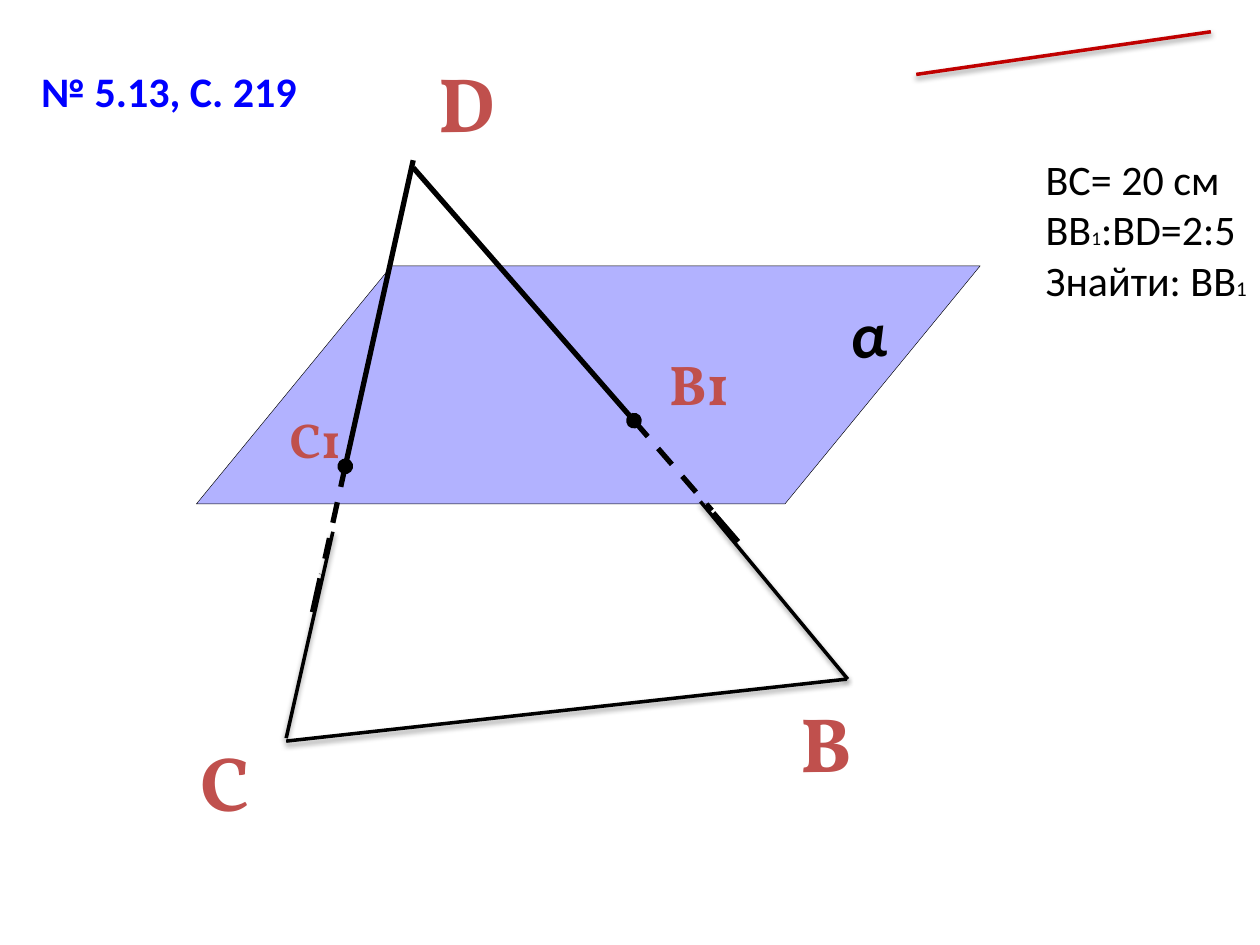
from lxml import etree
from pptx import Presentation
from pptx.dml.color import RGBColor as Rgb
from pptx.enum.dml import MSO_LINE as Dash
from pptx.enum.shapes import MSO_CONNECTOR as Conn, MSO_SHAPE as Shape
from pptx.enum.text import MSO_AUTO_SIZE as Fit, PP_ALIGN as Align
from pptx.oxml.ns import qn
from pptx.util import Cm, Pt

BLACK = Rgb(0, 0, 0)
BLUE = Rgb(0, 0, 255)
RED = Rgb(192, 0, 0)
ROSE = Rgb(192, 80, 77)
SERIF = "Vollkorn"
SANS = "Calibri"


def sub(node, tag, **attrs):
    return etree.SubElement(node, qn(tag), **attrs)


def add_plane(slide):
    plane = slide.shapes.add_shape(
        Shape.PARALLELOGRAM, Cm(3.96), Cm(5.36), Cm(15.8), Cm(4.8))
    plane.shadow.inherit = False
    plane.adjustments[0] = 0.82
    plane.fill.solid()
    plane.fill.fore_color.rgb = BLUE
    tint = plane.fill._xPr.find(qn("a:solidFill"))[0]
    sub(tint, "a:alpha", val="30000")
    plane.line.color.rgb = BLACK
    plane.line.width = Pt(0.25)


def add_line(slide, start, end, width=3, color=BLACK, dash=False,
             dot=False, shade=False):
    line = slide.shapes.add_connector(
        Conn.STRAIGHT, *(Cm(n) for n in start + end))
    line.line.color.rgb = color
    line.line.width = Pt(width)
    if dash:
        line.line.dash_style = Dash.DASH
    props = line._element.spPr
    if dot:
        sub(props.find(qn("a:ln")), "a:tailEnd", type="oval")
    effect = sub(props, "a:effectLst")
    if shade:
        cast = sub(effect, "a:outerShdw", blurRad="40000", dist="20000",
                   dir="5400000", rotWithShape="0")
        tone = sub(cast, "a:srgbClr", val=str(BLACK))
        sub(tone, "a:alpha", val="38000")


def add_side(slide, top, cut, gap, rest, foot):
    add_line(slide, top, cut, dot=True)
    add_line(slide, cut, gap, dash=True)
    add_line(slide, rest, foot)


def add_box(slide, place, wrap=False):
    box = slide.shapes.add_textbox(*(Cm(n) for n in place))
    frame = box.text_frame
    frame.word_wrap = wrap
    frame.auto_size = Fit.SHAPE_TO_FIT_TEXT
    return box


def style(run, size, name, color, bold=True):
    font = run.font
    font.size = Pt(size)
    font.name = name
    font.color.rgb = color
    font.bold = bold


def add_label(slide, text, place, size, name=SERIF, color=ROSE,
              align=Align.CENTER, wrap=False):
    box = add_box(slide, place, wrap)
    box.text_frame.text = text
    para = box.text_frame.paragraphs[0]
    para.alignment = align
    style(para.runs[0], size, name, color)
    return box


def add_given(slide):
    rows = [
        [("BC= 20 см", 24)],
        [("BB", 24), ("1", 11), (":BD=2:5", 24)],
        [("Знайти: ВВ", 24), ("1", 12)],
    ]
    frame = add_box(slide, (20.83, 2.97, 4.6, 3.33), True).text_frame
    for i, row in enumerate(rows):
        para = frame.add_paragraph() if i else frame.paragraphs[0]
        for text, size in row:
            run = para.add_run()
            run.text = text
            style(run, size, SANS, BLACK, False)


def main():
    deck = Presentation()
    deck.slide_width, deck.slide_height = Cm(25.4), Cm(19.05)
    slide = deck.slides.add_slide(deck.slide_layouts[6])

    add_plane(slide)
    alpha = add_label(slide, "α", (16.87, 5.84, 1.04, 1.78), 36, SANS, BLACK,
                      Align.LEFT, True)
    alpha.rotation = 354.8
    alpha.text_frame.paragraphs[0].runs[0].font.italic = True

    add_side(slide, (8.33, 3.38), (12.78, 8.48), (14.35, 10.29),
             (14.38, 10.34), (14.88, 10.92))
    add_side(slide, (8.33, 3.23), (6.96, 9.4), (6.48, 11.58),
             (6.45, 11.66), (6.3, 12.34))

    for start, end, color in [
        ((6.71, 10.72), (5.77, 14.88), BLACK),
        ((14.12, 10.11), (17.09, 13.69), BLACK),
        ((17.07, 13.69), (5.77, 14.94), BLACK),
        ((24.41, 0.64), (18.47, 1.5), RED),
    ]:
        add_line(slide, start, end, 2, color, shade=True)

    for text, left, top, width in [
        ("B", 15.88, 13.89, 1.55),
        ("D", 8.53, 0.99, 1.75),
        ("С", 3.76, 14.68, 1.55),
    ]:
        add_label(slide, text, (left, top, width, 2.13), 44)
    add_label(slide, "C1", (5.16, 8.13, 2.39, 1.45), 28, wrap=True)
    add_label(slide, "B1", (12.9, 6.93, 2.39, 1.63), 32, wrap=True)
    add_label(slide, "№ 5.13, С. 219", (0.58, 1.19, 5.72, 1.27), 24, SANS,
              BLUE, Align.LEFT)
    add_given(slide)
    deck.save("out.pptx")


if __name__ == "__main__":
    main()
